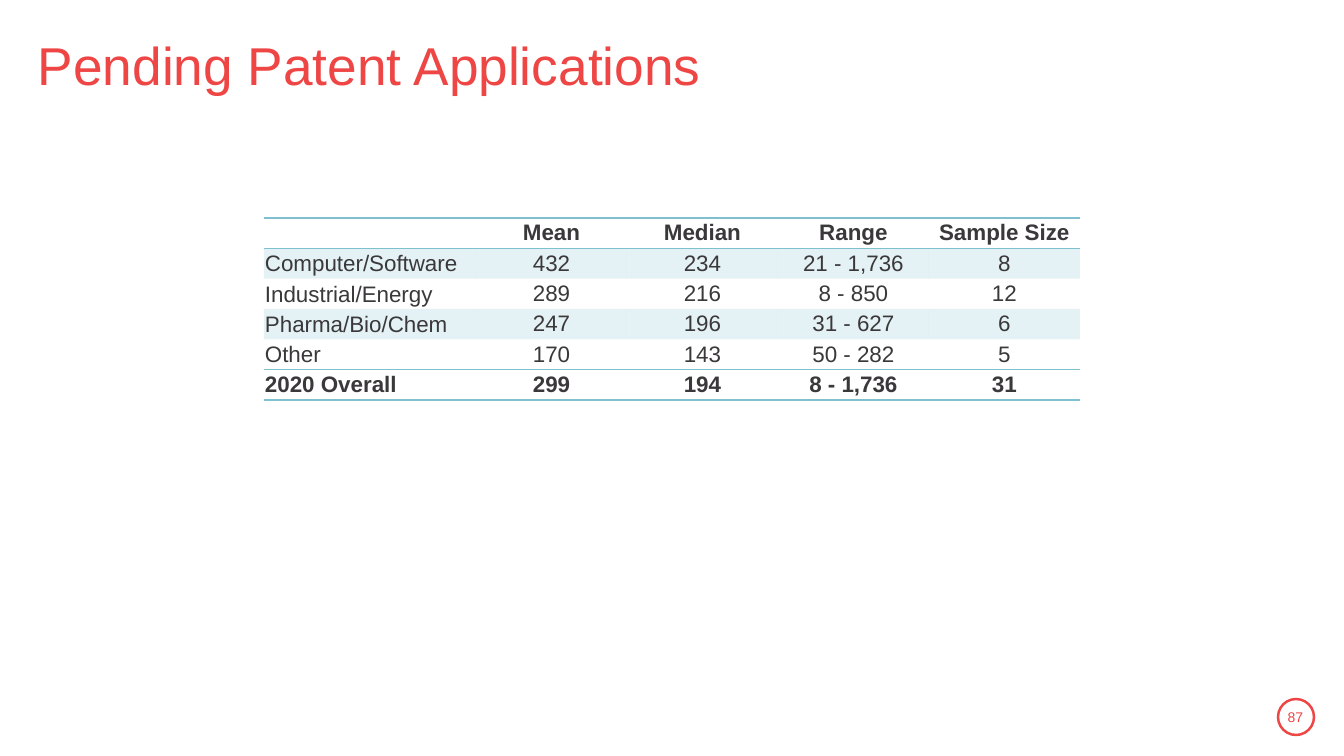
from dataclasses import dataclass

from lxml import etree
from pptx import Presentation
from pptx import util as u
from pptx.dml.color import RGBColor
from pptx.enum import shapes, text
from pptx.oxml import ns

SCALE = 914400 / 100.8


def px(n):
    return u.Emu(round(n * SCALE))


@dataclass(frozen=True)
class Theme:
    font: str = "Arial"
    red: str = "EE4545"
    teal: str = "7FC0CF"
    ink: str = "3A383A"
    title: int = 38
    body: int = 16
    small: int = 10
    ring: float = 1.75
    rule: float = 1
    tint: int = 20


def write(frame, words, *, font, size, color, bold=False, align="LEFT", lead=None):
    frame.word_wrap = True
    para = frame.paragraphs[0]
    para.alignment = getattr(text.PP_ALIGN, align)
    if lead:
        para.line_spacing = lead
    run = para.add_run()
    run.text = words
    run.font.name = font
    run.font.size = u.Pt(size)
    run.font.bold = bold
    run.font.color.rgb = RGBColor.from_string(color)


def add(parent, tag, **attrs):
    return etree.SubElement(parent, ns.qn(tag), attrs)


class Deck:
    def __init__(self, theme):
        self.theme = theme
        self.prs = Presentation()
        self.prs.slide_width, self.prs.slide_height = px(1344), px(756)
        self.slide = self.prs.slides.add_slide(self.prs.slide_layouts[6])

    def label(self, words, box, **form):
        frame = self.slide.shapes.add_textbox(*map(px, box)).text_frame
        frame.vertical_anchor = text.MSO_ANCHOR.MIDDLE
        write(frame, words, font=self.theme.font, **form)

    def ring(self, box):
        ring = self.slide.shapes.add_shape(shapes.MSO_SHAPE.OVAL, *map(px, box))
        ring.shadow.inherit = False
        ring.fill.background()
        ring.line.color.rgb = RGBColor.from_string(self.theme.red)
        ring.line.width = u.Pt(self.theme.ring)

    def rules(self, cell):
        props = cell._tc.get_or_add_tcPr()
        for side in ("a:lnT", "a:lnB"):
            line = add(props, side, w=str(u.Pt(self.theme.rule)))
            add(add(line, "a:solidFill"), "a:srgbClr", val=self.theme.teal)

    def tint(self, cell):
        cell.fill.solid()
        cell.fill.fore_color.rgb = RGBColor.from_string(self.theme.teal)
        color = cell._tc.tcPr.find(".//" + ns.qn("a:srgbClr"))
        add(color, "a:alpha", val=str(self.theme.tint * 1000))

    def table(self, rows, box, widths):
        grid = self.slide.shapes.add_table(len(rows), len(widths), *map(px, box)).table
        grid.first_row = grid.horz_banding = False
        # Plain style without grid lines
        style = grid._tbl.tblPr.find(ns.qn("a:tableStyleId"))
        style.text = "{2D5ABB26-0587-4C30-8999-92F81FD0307C}"
        for col, width in zip(grid.columns, widths):
            col.width = px(width)
        for r, row in enumerate(rows):
            strong = r in (0, len(rows) - 1)
            for c, words in enumerate(row):
                cell = grid.cell(r, c)
                pad = px(1 if c == 0 and r else 0)
                cell.margin_left = cell.margin_top = cell.margin_right = pad
                cell.margin_bottom = 0
                cell.vertical_anchor = text.MSO_ANCHOR.MIDDLE
                # Rules frame the header and total; odd body rows are tinted
                if strong:
                    self.rules(cell)
                if r % 2 and not strong:
                    self.tint(cell)
                else:
                    cell.fill.background()
                if words:
                    write(cell.text_frame, words, font=self.theme.font,
                          size=self.theme.body, color=self.theme.ink, bold=strong,
                          align="CENTER" if c else "LEFT")


ROWS = [
    ("", "Mean", "Median", "Range", "Sample Size"),
    ("Computer/Software", "432", "234", "21 - 1,736", "8"),
    ("Industrial/Energy", "289", "216", "8 - 850", "12"),
    ("Pharma/Bio/Chem", "247", "196", "31 - 627", "6"),
    ("Other", "170", "143", "50 - 282", "5"),
    ("2020 Overall", "299", "194", "8 - 1,736", "31"),
]


def main():
    theme = Theme()
    deck = Deck(theme)

    # Page number
    deck.ring((1278, 699, 36, 36))
    deck.label("87", (1272, 697, 47, 40), size=theme.small, color=theme.red,
               align="CENTER")

    # Title
    deck.label("Pending Patent Applications", (28, 24, 1292, 88),
               size=theme.title, color=theme.red, lead=0.9)

    # Patent table
    deck.table(ROWS, (264, 218, 816, 182), [212] + [151] * 4)

    deck.prs.save("out.pptx")


if __name__ == "__main__":
    main()
